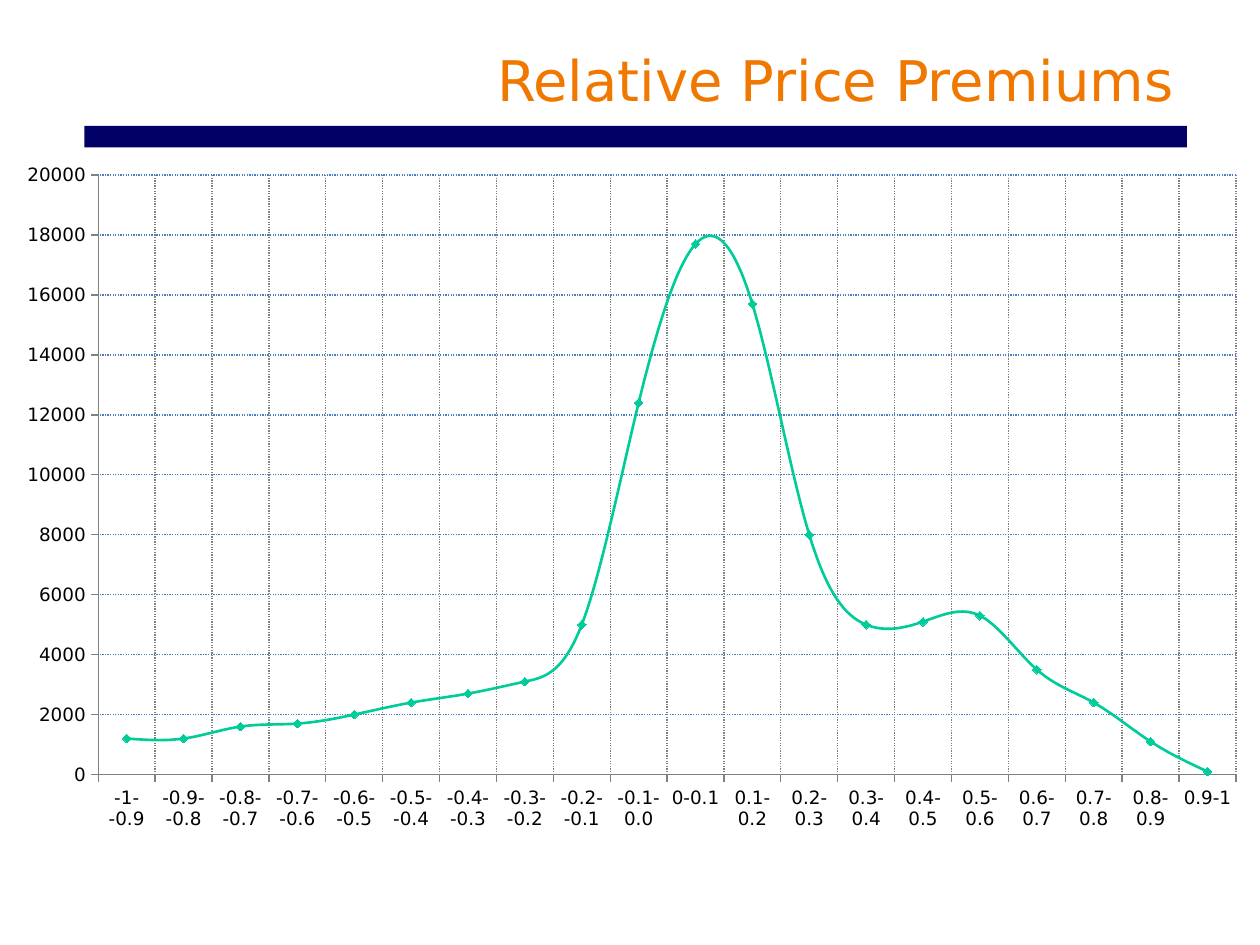
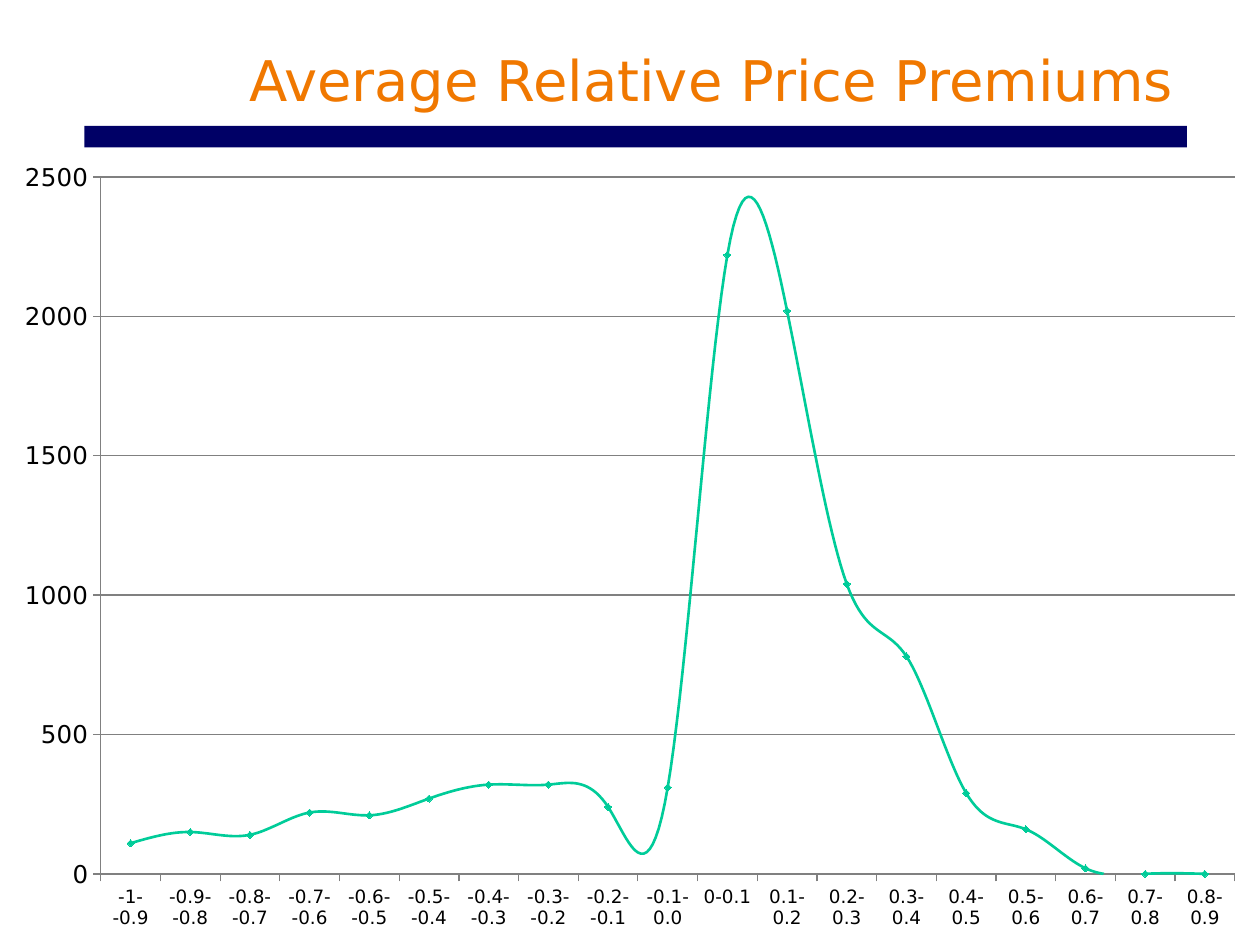
from lxml import etree
from pptx import Presentation
from pptx import util as u
from pptx.chart.data import CategoryChartData
from pptx.dml.color import RGBColor
from pptx.enum import chart as chart_enum
from pptx.enum import dml, shapes, text
from pptx.oxml import ns

WIDTH, HEIGHT = 10, 7.5
FONT = "DejaVu Sans"
COLORS = {
    "title": "F07800",
    "band": "000066",
    "series": "00CC99",
    "label": "000000",
    "axis": "808080",
    "grid": "4B7EBC",
}
BAND = (0.67, 1, 8.75, 0.17)
TITLE = (0, 0, 9.42, 1.25)
RANGES = (
    "-1--0.9 -0.9--0.8 -0.8--0.7 -0.7--0.6 -0.6--0.5 -0.5--0.4 -0.4--0.3 "
    "-0.3--0.2 -0.2--0.1 -0.1-0.0 0-0.1 0.1-0.2 0.2-0.3 0.3-0.4 0.4-0.5 "
    "0.5-0.6 0.6-0.7 0.7-0.8 0.8-0.9 0.9-1"
).split()
SLIDES = [
    {
        "title": "Relative Price Premiums",
        "values": [1200, 1200, 1600, 1700, 2000, 2400, 2700, 3100, 5000, 12400,
                   17700, 15700, 8000, 5000, 5100, 5300, 3500, 2400, 1100, 100],
        "top": 1,
        "plot": {"x": 0.078, "y": 0.06, "w": 0.903, "h": 0.732},
        "maximum": 20000,
        "step": 2000,
        "value_size": 10.5,
        "marker": 5,
        "dotted": True,
    },
    {
        "title": "Average Relative Price Premiums",
        "values": [110, 150, 140, 220, 210, 270, 320, 320, 240, 310,
                   2220, 2020, 1040, 780, 290, 160, 20, 0, 0],
        "top": 1.17,
        "plot": {"x": 0.08, "y": 0.037, "w": 0.9, "h": 0.874},
        "maximum": 2500,
        "step": 500,
        "value_size": 14,
        "marker": 4,
        "dotted": False,
    },
]


def color(name):
    return RGBColor.from_string(COLORS[name])


def inches(box):
    return [u.Inches(length) for length in box]


def format_font(font, size, name):
    font.name, font.size, font.color.rgb = FONT, u.Pt(size), color(name)


def write_text(shape, words, size, name, align, anchor):
    frame = shape.text_frame
    frame.word_wrap = True
    frame.auto_size = text.MSO_AUTO_SIZE.NONE
    frame.vertical_anchor = anchor
    paragraph = frame.paragraphs[0]
    paragraph.alignment = align
    run = paragraph.add_run()
    run.text = words
    format_font(run.font, size, name)


def format_line(line, name, width, dash=None):
    line.color.rgb = color(name)
    line.width = u.Pt(width)
    if dash:
        line.dash_style = dash


def place_plot(chart, plot):
    area = chart.element.chart.plotArea
    for old in area.findall(ns.qn("c:layout")):
        area.remove(old)
    layout = etree.Element(ns.qn("c:layout"))
    manual = etree.SubElement(layout, ns.qn("c:manualLayout"))
    settings = {"layoutTarget": "inner", "xMode": "edge", "yMode": "edge", **plot}
    for tag, value in settings.items():
        etree.SubElement(manual, ns.qn(f"c:{tag}")).set("val", str(value))
    area.insert(0, layout)


def format_axis(axis, size, grid):
    axis.major_tick_mark = chart_enum.XL_TICK_MARK.OUTSIDE
    axis.minor_tick_mark = chart_enum.XL_TICK_MARK.NONE
    format_font(axis.tick_labels.font, size, "label")
    format_line(axis.format.line, "axis", 0.75)
    axis.has_major_gridlines = grid is not None
    if grid:
        format_line(axis.major_gridlines.format.line, *grid)


def add_premium_chart(slide, content):
    data = CategoryChartData()
    data.categories = RANGES[:len(content["values"])]
    data.add_series("Series 1", content["values"])
    box = (0, content["top"], WIDTH, HEIGHT - content["top"])
    chart = slide.shapes.add_chart(
        chart_enum.XL_CHART_TYPE.LINE_MARKERS, *inches(box), data).chart
    chart.has_title = chart.has_legend = False
    format_font(chart.font, 10.5, "label")
    place_plot(chart, content["plot"])

    dots = dml.MSO_LINE.ROUND_DOT
    if content["dotted"]:
        category_grid, value_grid = ("axis", 0.75, dots), ("grid", 0.75, dots)
    else:
        category_grid, value_grid = None, ("axis", 0.75)
    format_axis(chart.category_axis, 10.5, category_grid)
    value_axis = chart.value_axis
    format_axis(value_axis, content["value_size"], value_grid)
    value_axis.minimum_scale = 0
    value_axis.maximum_scale = content["maximum"]
    value_axis.major_unit = content["step"]

    chart.plots[0].vary_by_categories = False
    series = chart.plots[0].series[0]
    series.smooth = True
    format_line(series.format.line, "series", 1.5)
    marker = series.marker
    marker.style = chart_enum.XL_MARKER_STYLE.DIAMOND
    marker.size = content["marker"]
    marker.format.fill.solid()
    marker.format.fill.fore_color.rgb = color("series")
    format_line(marker.format.line, "series", 0.75)


def add_slide(presentation, content):
    slide = presentation.slides.add_slide(presentation.slide_layouts[5])
    band = slide.shapes.add_shape(shapes.MSO_SHAPE.RECTANGLE, *inches(BAND))
    band.shadow.inherit = False
    band.fill.solid()
    band.fill.fore_color.rgb = color("band")
    band.line.fill.background()
    title = slide.shapes.title
    title.left, title.top, title.width, title.height = inches(TITLE)
    write_text(title, content["title"], size=32, name="title",
               align=text.PP_ALIGN.RIGHT, anchor=text.MSO_ANCHOR.MIDDLE)
    add_premium_chart(slide, content)


def main():
    presentation = Presentation()
    presentation.slide_width, presentation.slide_height = inches((WIDTH, HEIGHT))
    for content in SLIDES:
        add_slide(presentation, content)
    presentation.save("out.pptx")


if __name__ == "__main__":
    main()
